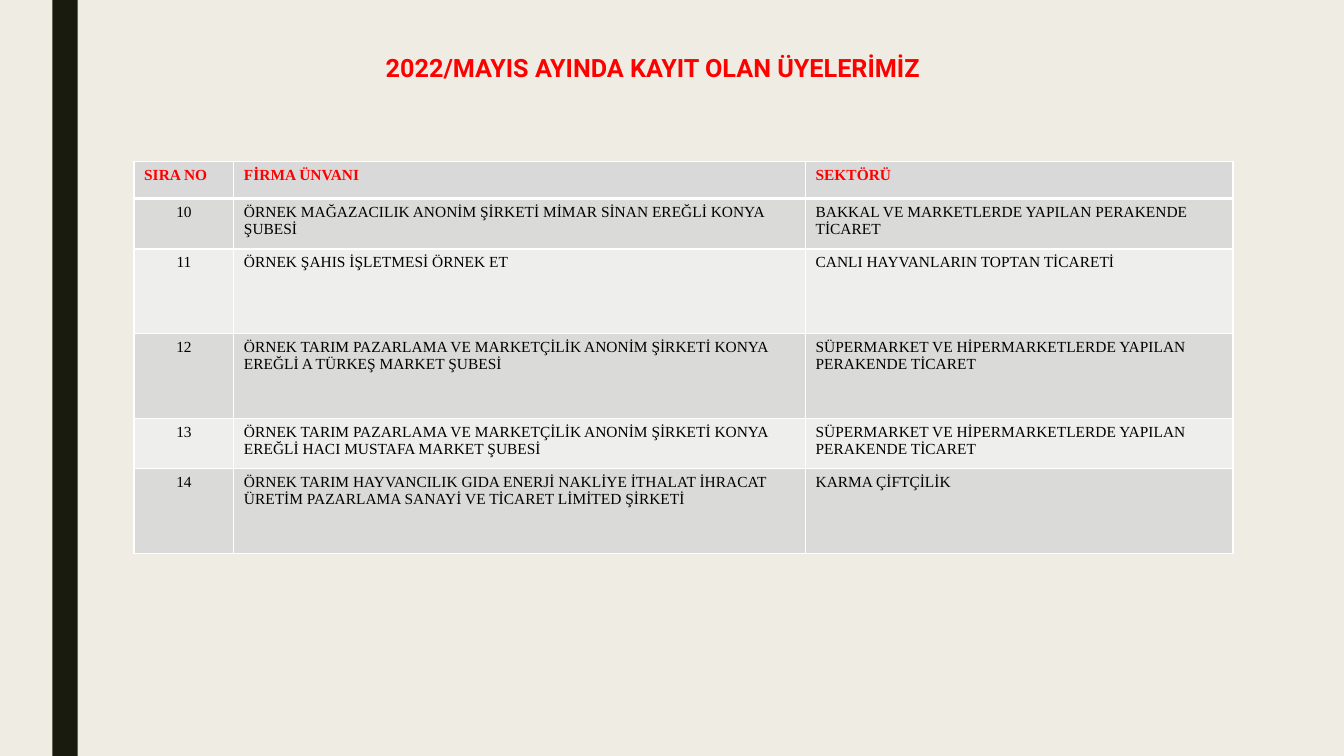
from lxml import etree
from pptx import Presentation
from pptx.dml.color import RGBColor
from pptx.enum.shapes import MSO_SHAPE
from pptx.enum.text import PP_ALIGN
from pptx.oxml.ns import qn
from pptx.util import Inches, Pt

RECTANGLE = MSO_SHAPE.RECTANGLE
LEFT, CENTER = PP_ALIGN.LEFT, PP_ALIGN.CENTER

# Content
TITLE = "2022/MAYIS AYINDA KAYIT OLAN ÜYELERİMİZ"
HEADINGS = ("SIRA NO", "FİRMA ÜNVANI", "SEKTÖRÜ")
FIRST_NUMBER = 10
SUPERMARKETS = "SÜPERMARKET VE HİPERMARKETLERDE YAPILAN PERAKENDE TİCARET"
MEMBERS = [
    ("ÖRNEK MAĞAZACILIK ANONİM ŞİRKETİ MİMAR SİNAN EREĞLİ KONYA ŞUBESİ",
     "BAKKAL VE MARKETLERDE YAPILAN PERAKENDE TİCARET"),
    ("ÖRNEK ŞAHIS İŞLETMESİ ÖRNEK ET",
     "CANLI HAYVANLARIN TOPTAN TİCARETİ"),
    ("ÖRNEK TARIM PAZARLAMA VE MARKETÇİLİK ANONİM ŞİRKETİ KONYA "
     "EREĞLİ A TÜRKEŞ MARKET ŞUBESİ", SUPERMARKETS),
    ("ÖRNEK TARIM PAZARLAMA VE MARKETÇİLİK ANONİM ŞİRKETİ KONYA "
     "EREĞLİ HACI MUSTAFA MARKET ŞUBESİ", SUPERMARKETS),
    ("ÖRNEK TARIM HAYVANCILIK GIDA ENERJİ NAKLİYE İTHALAT İHRACAT "
     "ÜRETİM PAZARLAMA SANAYİ VE TİCARET LİMİTED ŞİRKETİ",
     "KARMA ÇİFTÇİLİK"),
]

# Layout and formats
COLUMN_WIDTHS = (0.99, 5.67, 4.24)
ROW_HEIGHTS = (0.37, 0.5, 0.84, 0.84, 0.5, 0.84)
HEADING_FILL, BODY_FILLS = "D9D9D9", ("DADBD9", "EEEEED")
TITLE_FONT = {"name": "Roboto", "size": Pt(18), "bold": True}
HEADING_FONT = {"name": "Times New Roman", "size": Pt(11), "bold": True}
BODY_FONT = {**HEADING_FONT, "bold": False}


def paint(color_format, color):
    color_format.rgb = RGBColor.from_string(color)


def write(frame, text, font_values, color, alignment):
    paragraph = frame.paragraphs[0]
    paragraph.alignment = alignment
    run = paragraph.add_run()
    run.text = text
    for attribute, value in font_values.items():
        setattr(run.font, attribute, value)
    paint(run.font.color, color)


def set_borders(cell, widths):
    properties = cell._tc.get_or_add_tcPr()
    for position, (side, width) in enumerate(widths.items()):
        line = etree.Element(qn(f"a:ln{side}"), w=str(Pt(width)))
        fill = etree.SubElement(line, qn("a:solidFill"))
        etree.SubElement(fill, qn("a:srgbClr"), val="FFFFFF")
        properties.insert(position, line)


presentation = Presentation()
presentation.slide_width = Inches(13.33)
presentation.slide_height = Inches(7.5)
slide = presentation.slides.add_slide(presentation.slide_layouts[6])

# Background and side band
slide.background.fill.solid()
paint(slide.background.fill.fore_color, "EFEDE3")
band = slide.shapes.add_shape(
    RECTANGLE, Inches(0.52), 0, Inches(0.25), Inches(7.5))
band.shadow.inherit = False
band.fill.solid()
paint(band.fill.fore_color, "191B0E")
band.line.fill.background()

# Member table
rows = [HEADINGS] + [
    (str(number), *member) for number, member in enumerate(MEMBERS, FIRST_NUMBER)]
members = slide.shapes.add_table(
    len(rows), len(HEADINGS), Inches(1.33), Inches(1.6),
    Inches(sum(COLUMN_WIDTHS)), Inches(sum(ROW_HEIGHTS))).table
for column, width in zip(members.columns, COLUMN_WIDTHS):
    column.width = Inches(width)
for row, height in zip(members.rows, ROW_HEIGHTS):
    row.height = Inches(height)

for r, texts in enumerate(rows):
    heading = r == 0
    for c, text in enumerate(texts):
        cell = members.cell(r, c)
        cell.fill.solid()
        paint(cell.fill.fore_color,
              HEADING_FILL if heading else BODY_FILLS[(r - 1) % 2])
        set_borders(cell, {"L": 1, "R": 1, "T": 3 if r == 1 else 1,
                           "B": 3 if heading else 1})
        write(cell.text_frame, text,
              HEADING_FONT if heading else BODY_FONT,
              "FF0000" if heading else "000000",
              CENTER if c == 0 and not heading else LEFT)

# Title
title = slide.shapes.add_textbox(
    Inches(3.4), Inches(0.47), Inches(6.15), Inches(0.4))
title.text_frame.word_wrap = True
write(title.text_frame, TITLE, TITLE_FONT, "FF0000", CENTER)

presentation.save("out.pptx")
